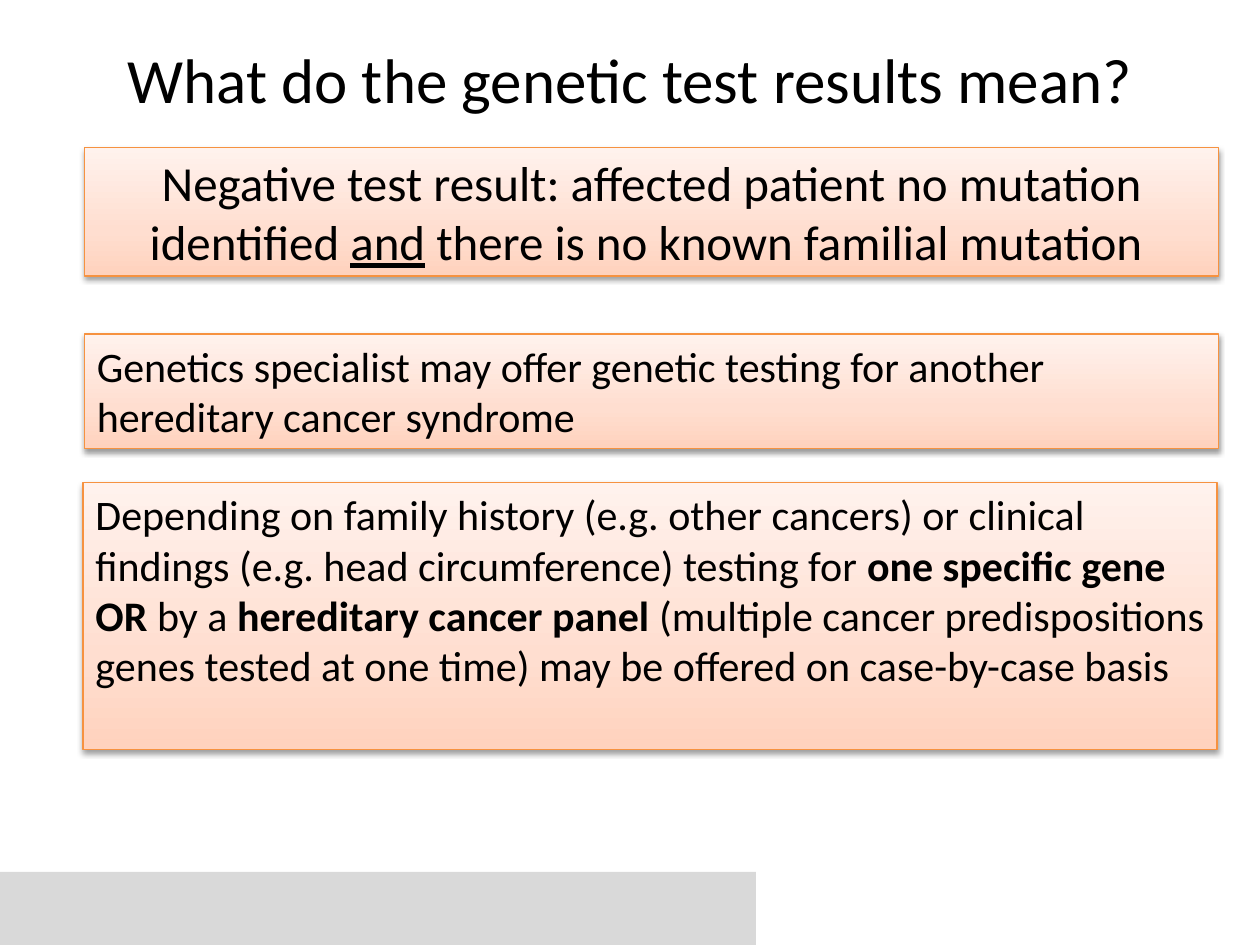
from pptx import Presentation
from pptx.dml.color import RGBColor
from pptx.enum.shapes import MSO_SHAPE
from pptx.enum.text import MSO_ANCHOR, MSO_AUTO_SIZE, PP_ALIGN
from pptx.oxml import parse_xml
from pptx.oxml.ns import nsdecls
from pptx.util import Inches, Pt

RECTANGLE = MSO_SHAPE.RECTANGLE
TOP, MIDDLE = MSO_ANCHOR.TOP, MSO_ANCHOR.MIDDLE
LEFT, CENTER = PP_ALIGN.LEFT, PP_ALIGN.CENTER
NO_FIT, GROW = MSO_AUTO_SIZE.NONE, MSO_AUTO_SIZE.SHAPE_TO_FIT_TEXT

GRADIENT = f"""<a:gradFill {nsdecls("a")} rotWithShape="1"><a:gsLst>
<a:gs pos="0"><a:srgbClr val="FFD2BD"/></a:gs>
<a:gs pos="35000"><a:srgbClr val="FFDED0"/></a:gs>
<a:gs pos="100000"><a:srgbClr val="FFF2ED"/></a:gs>
</a:gsLst><a:lin ang="16200000" scaled="1"/></a:gradFill>"""
SHADOW = f"""<a:outerShdw {nsdecls("a")} blurRad="40000" dist="20000" dir="5400000" rotWithShape="0">
<a:srgbClr val="000000"><a:alpha val="38000"/></a:srgbClr></a:outerShdw>"""


def color(value):
    return RGBColor.from_string(value)


def add_runs(paragraph, size, runs):
    for text, formats in runs:
        run = paragraph.add_run()
        run.text = text
        run.font.color.rgb = color("000000")
        for name, value in {"name": "Calibri", "size": Pt(size), **formats}.items():
            setattr(run.font, name, value)


presentation = Presentation()
presentation.slide_width, presentation.slide_height = Inches(10), Inches(7.5)
slide = presentation.slides.add_slide(presentation.slide_layouts[5])

# Footer bar, behind everything else
footer_bar = slide.shapes.add_shape(RECTANGLE, Inches(0), Inches(6.92), Inches(6), Inches(0.58))
footer_bar.shadow.inherit = False
footer_bar.fill.solid()
footer_bar.fill.fore_color.rgb = color("D9D9D9")
footer_bar.line.fill.background()
slide.shapes.title.element.addprevious(footer_bar.element)

title = slide.shapes.title
title.left, title.top, title.width, title.height = Inches(0.5), Inches(0), Inches(9), Inches(1.25)
title.text_frame.vertical_anchor = MIDDLE
title_paragraph = title.text_frame.paragraphs[0]
title_paragraph.alignment = CENTER
add_runs(title_paragraph, 36, [("What do the genetic test results mean?", {})])

# left, top, height, anchor, fit, alignment, text size, runs
panels = [
    (0.67, 2.65, 0.91, TOP, GROW, LEFT, 24, [
        ("Genetics specialist may offer genetic testing for another hereditary cancer syndrome", {}),
    ]),
    (0.66, 3.83, 2.12, TOP, GROW, LEFT, 24, [
        ("Depending on family history (e.g. other cancers) or clinical findings "
         "(e.g. head circumference) testing for ", {}),
        ("one specific gene OR ", {"bold": True}),
        ("by a ", {}),
        ("hereditary cancer panel ", {"bold": True}),
        ("(multiple cancer predispositions genes tested at one time) "
         "may be offered on case-by-case basis", {}),
    ]),
    (0.67, 1.17, 1.02, MIDDLE, NO_FIT, CENTER, 28, [
        ("Negative test result: affected patient no mutation", {}),
        (" ", {"underline": True}),
        ("identified ", {}),
        ("and", {"underline": True}),
        (" there is no known familial mutation ", {}),
    ]),
]
for left, top, height, anchor, fit, alignment, size, runs in panels:
    panel = slide.shapes.add_shape(RECTANGLE, Inches(left), Inches(top), Inches(9), Inches(height))
    properties = panel.element.spPr
    properties.append(parse_xml(GRADIENT))
    panel.line.color.rgb = color("F69240")
    panel.line.width = Pt(0.75)
    panel.shadow.inherit = False
    properties[-1].append(parse_xml(SHADOW))
    frame = panel.text_frame
    frame.word_wrap = True
    frame.auto_size = fit
    frame.vertical_anchor = anchor
    paragraph = frame.paragraphs[0]
    paragraph.alignment = alignment
    add_runs(paragraph, size, runs)

presentation.save("out.pptx")
